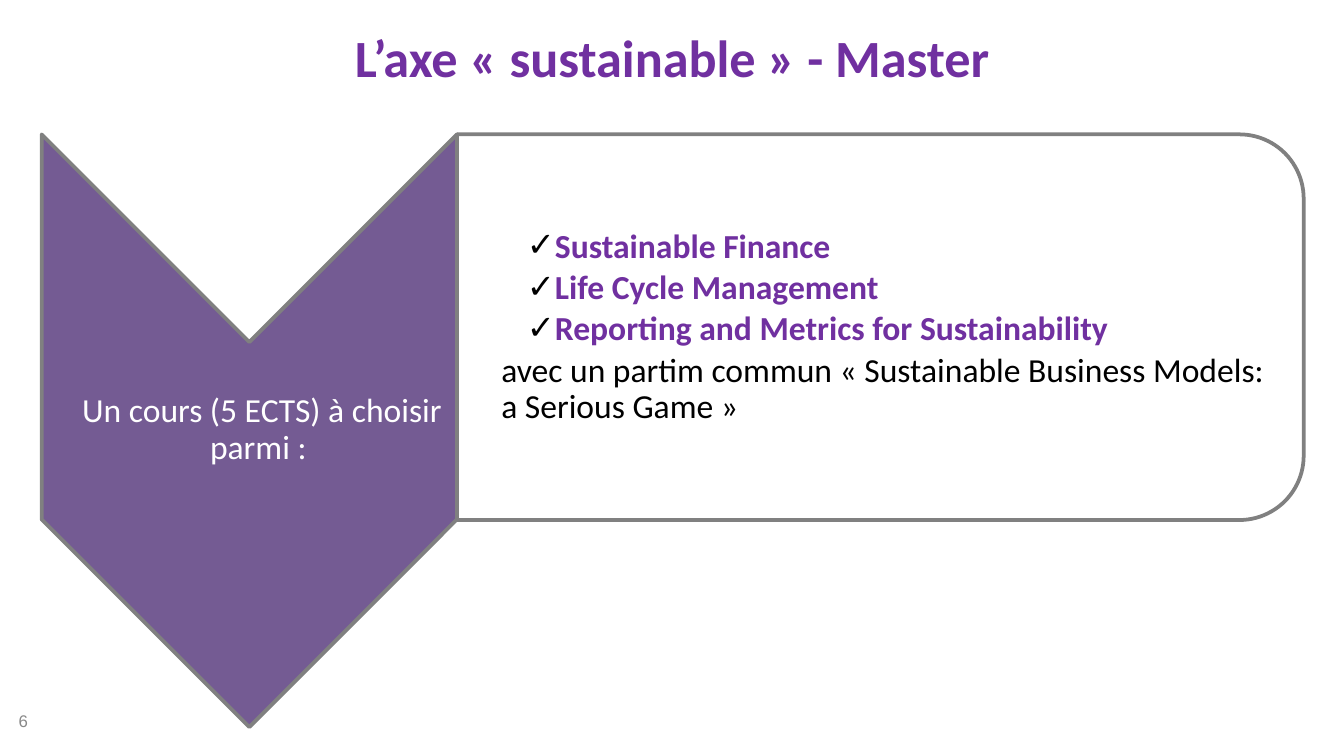
from lxml.etree import SubElement
from pptx import Presentation
from pptx.dml.color import RGBColor
from pptx.enum.shapes import MSO_SHAPE
from pptx.enum.text import MSO_ANCHOR, PP_ALIGN
from pptx.oxml.ns import qn
from pptx.util import Inches, Pt

# Content
TITLE = "L’axe « sustainable » - Master"
PROMPT = "Un cours (5 ECTS) à choisir parmi : "
COURSES = [
    "Sustainable Finance",
    "Life Cycle Management",
    "Reporting and Metrics for Sustainability",
]
COMMON_PART = "avec un partim commun « Sustainable Business Models: a Serious Game »"
PAGE_NUMBER = "6"

COLORS = {
    "accent": "7030A0",
    "chevron": "745B93",
    "outline": "808080",
    "number": "898989",
    "white": "FFFFFF",
    "black": "000000",
}


def color(name):
    return RGBColor.from_string(COLORS[name])


def add_span(paragraph, text, size, color_name, bold=False, font="Calibri"):
    span = paragraph.add_run()
    span.text = text
    span.font.name = font
    span.font.size = Pt(size)
    span.font.bold = bold
    span.font.color.rgb = color(color_name)


def add_turned_shape(page, kind, left, top, width, height, fill):
    """Add a shape turned by 90° that covers the given area."""
    shape = page.shapes.add_shape(
        kind,
        Inches(left + (width - height) / 2),
        Inches(top + (height - width) / 2),
        Inches(height),
        Inches(width),
    )
    shape.rotation = 90
    shape.shadow.inherit = False
    shape.fill.solid()
    shape.fill.fore_color.rgb = color(fill)
    shape.line.color.rgb = color("outline")
    shape.line.width = Pt(2)
    return shape


def add_box(page, left, top, width, height, left_inset=0.1, inset=0.05):
    box = page.shapes.add_textbox(
        Inches(left), Inches(top), Inches(width), Inches(height))
    frame = box.text_frame
    frame.word_wrap = True
    frame.vertical_anchor = MSO_ANCHOR.MIDDLE
    frame.margin_left = Inches(left_inset)
    frame.margin_top = frame.margin_right = frame.margin_bottom = Inches(inset)
    return frame


def format_paragraph(paragraph, indent, space_after, bullet=None):
    properties = paragraph._p.get_or_add_pPr()
    properties.set("marL", str(Inches(indent)))
    properties.set("indent", "0")
    if bullet:
        bullet_color = SubElement(properties, qn("a:buClr"))
        SubElement(bullet_color, qn("a:srgbClr"), val=COLORS["black"])
        SubElement(properties, qn("a:buFont"), typeface="Arial")
        SubElement(properties, qn("a:buChar"), char=bullet)
    paragraph.line_spacing = 0.9
    paragraph.space_after = Pt(space_after)


# Widescreen page, 16 to 9
deck = Presentation()
deck.slide_width = Inches(10)
deck.slide_height = Inches(10 * 9 / 16)
page = deck.slides.add_slide(deck.slide_layouts[5])

# Title
title = page.shapes.title
title.left, title.top = Inches(0.5), Inches(0.14)
title.width, title.height = Inches(9), Inches(0.62)
title.text_frame.vertical_anchor = MSO_ANCHOR.TOP
heading = title.text_frame.paragraphs[0]
heading.alignment = PP_ALIGN.CENTER
add_span(heading, TITLE, 28, "accent", bold=True)

# Page number
number = add_box(page, 0.04, 5.21, 2.33, 0.3)
add_span(number.paragraphs[0], PAGE_NUMBER, 9, "number", font="Arial")

# Chevron pointing down, with the prompt
LEFT, TOP, CHEVRON_WIDTH, PANEL_WIDTH = 0.31, 1, 3.09, 6.3
PANEL_LEFT = LEFT + CHEVRON_WIDTH
add_turned_shape(page, MSO_SHAPE.CHEVRON, LEFT, TOP, CHEVRON_WIDTH, 4.41, "chevron")
prompt = add_box(page, LEFT, 2.54, CHEVRON_WIDTH, 1.32, 0.01, 0.01).paragraphs[0]
format_paragraph(prompt, 0.19, 6.3)
prompt.alignment = PP_ALIGN.CENTER
add_span(prompt, PROMPT, 18, "white")

# Panel rounded on the right, with the courses
panel = add_turned_shape(page, MSO_SHAPE.ROUND_2_SAME_RECTANGLE,
                         PANEL_LEFT, TOP, PANEL_WIDTH, 2.87, "white")
fill_color = panel.fill._xPr.find(qn("a:solidFill")).find(qn("a:srgbClr"))
SubElement(fill_color, qn("a:alpha"), val="90000")

courses = add_box(page, PANEL_LEFT, 1.14, 6.16, 2.59, 0.14, 0.01)
for index, course in enumerate(COURSES):
    paragraph = courses.add_paragraph() if index else courses.paragraphs[0]
    paragraph.level = 1
    format_paragraph(paragraph, 0.38, 2.7, bullet="✓")
    add_span(paragraph, course, 18, "accent", bold=True)
closing = courses.add_paragraph()
closing.level = 1
format_paragraph(closing, 0.19, 2.7)
add_span(closing, COMMON_PART, 18, "black")

deck.save("out.pptx")
